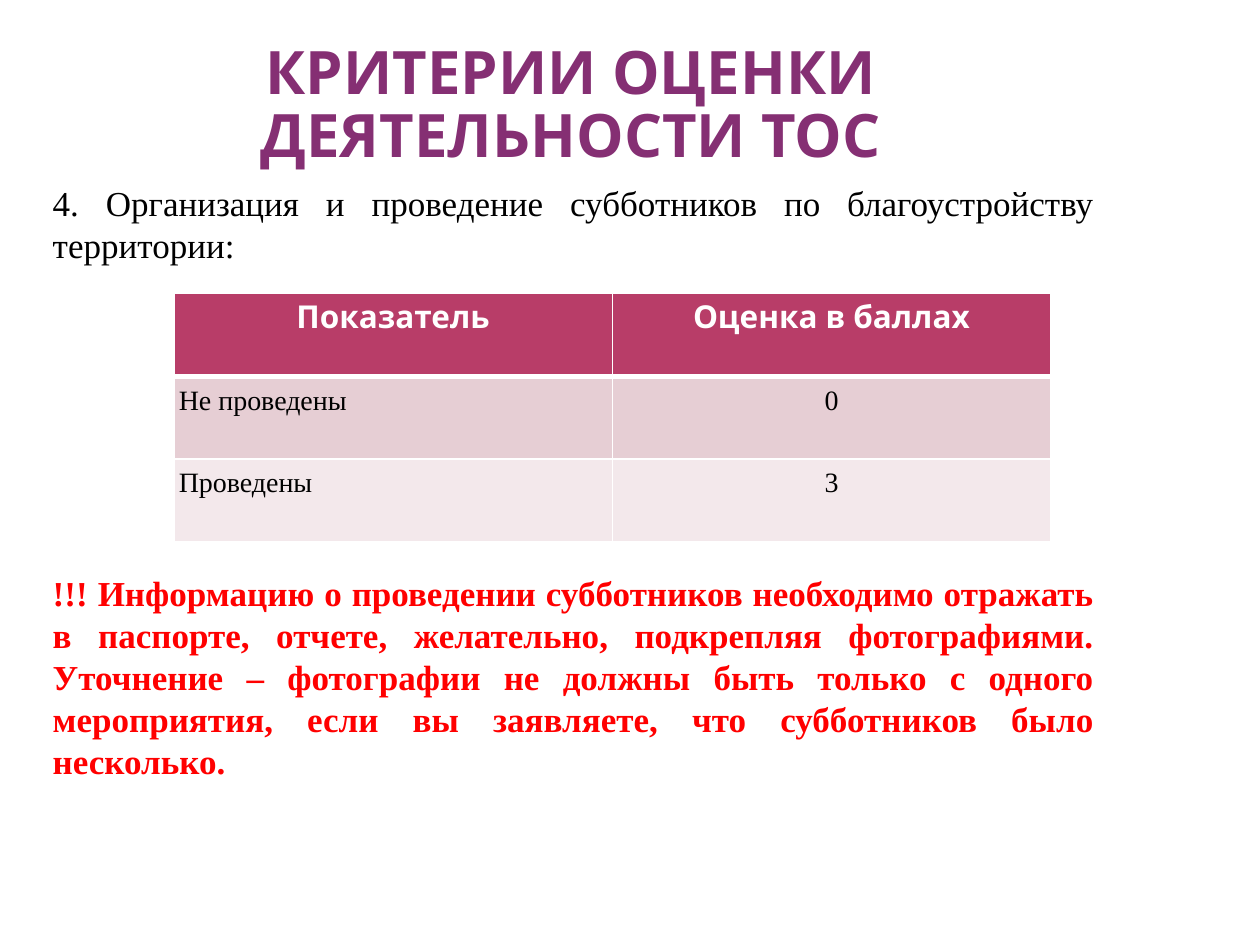
from dataclasses import dataclass

from pptx import Presentation
from pptx.dml.color import RGBColor
from pptx.enum.text import MSO_ANCHOR, MSO_AUTO_SIZE, PP_ALIGN
from pptx.oxml import parse_xml
from pptx.oxml.ns import nsdecls
from pptx.util import Inches, Pt


@dataclass(frozen=True)
class Theme:
    heading_font: str = "Karla"
    body_font: str = "Times New Roman"
    title: str = "852F73"
    text: str = "000000"
    warning: str = "FF0000"
    white: str = "FFFFFF"
    header_fill: str = "B83D68"
    row_fills: tuple = ("E6CED4", "F3E8EB")
    title_size: float = 34.2
    body_size: float = 20
    header_size: float = 18
    cell_size: float = 16


THEME = Theme()

TITLE = "КРИТЕРИИ ОЦЕНКИ ДЕЯТЕЛЬНОСТИ ТОС"
CRITERION = "4. Организация и проведение субботников по благоустройству территории:"
WARNING = (
    "!!! Информацию о проведении субботников необходимо отражать в паспорте, "
    "отчете, желательно, подкрепляя фотографиями. Уточнение – фотографии не "
    "должны быть только с одного мероприятия, если вы заявляете, что "
    "субботников было несколько."
)
SCORES = [
    ("Показатель", "Оценка в баллах"),
    ("Не проведены", "0"),
    ("Проведены", "3"),
]


def write(paragraph, text, font_name, size, color, align, bold=False):
    paragraph.text = text
    paragraph.alignment = align
    for run in paragraph.runs:
        run.font.name = font_name
        run.font.size = Pt(size)
        run.font.bold = bold
        run.font.color.rgb = RGBColor.from_string(color)


def add_title(slide):
    title = slide.shapes.title
    title.left, title.top = Inches(0.28), Inches(0.21)
    title.width, title.height = Inches(8.5), Inches(1.14)
    frame = title.text_frame
    frame.word_wrap = True
    frame.auto_size = MSO_AUTO_SIZE.NONE
    frame.vertical_anchor = MSO_ANCHOR.BOTTOM
    frame.margin_left = frame.margin_right = Inches(0.05)
    frame.margin_top = frame.margin_bottom = 0
    heading = frame.paragraphs[0]
    write(heading, TITLE, THEME.heading_font, THEME.title_size, THEME.title,
          PP_ALIGN.CENTER, bold=True)
    heading.line_spacing = 0.88


def add_body(slide):
    """Place the criterion and the warning, leaving room for the table between."""
    body = slide.shapes.add_textbox(
        Inches(0.2), Inches(1.39), Inches(8.58), Inches(5.67))
    frame = body.text_frame
    frame.word_wrap = True
    criterion, warning = frame.paragraphs[0], frame.add_paragraph()
    write(criterion, CRITERION, THEME.body_font, THEME.body_size, THEME.text,
          PP_ALIGN.JUSTIFY)
    write(warning, WARNING, THEME.body_font, THEME.body_size, THEME.warning,
          PP_ALIGN.JUSTIFY, bold=True)
    warning.space_before = Pt(175)
    for paragraph in frame.paragraphs:
        paragraph.line_spacing = Pt(24)
        paragraph._p.get_or_add_pPr().set("marL", str(Inches(0.12)))


def set_borders(cell, top, bottom):
    """Draw white borders; the widths of top and bottom are in points."""
    properties = cell._tc.get_or_add_tcPr()
    widths = {"lnL": 1, "lnR": 1, "lnT": top, "lnB": bottom}
    for position, (side, width) in enumerate(widths.items()):
        border = parse_xml(
            f'<a:{side} {nsdecls("a")} w="{Pt(width)}"><a:solidFill>'
            f'<a:srgbClr val="{THEME.white}"/></a:solidFill></a:{side}>')
        properties.insert(position, border)


def format_cell(cell, text, row, column):
    is_header = row == 0
    paragraph = cell.text_frame.paragraphs[0]
    if is_header:
        fill = THEME.header_fill
        write(paragraph, text, THEME.heading_font, THEME.header_size,
              THEME.white, PP_ALIGN.CENTER, bold=True)
    else:
        fill = THEME.row_fills[row - 1]
        align = PP_ALIGN.JUSTIFY if column == 0 else PP_ALIGN.CENTER
        write(paragraph, text, THEME.body_font, THEME.cell_size, THEME.text, align)
        cell.margin_left = cell.margin_right = Inches(0.04)
        cell.margin_top = cell.margin_bottom = Inches(0.07)
    cell.fill.solid()
    cell.fill.fore_color.rgb = RGBColor.from_string(fill)
    set_borders(cell, top=3 if row == 1 else 1, bottom=3 if is_header else 1)


def add_score_table(slide):
    table = slide.shapes.add_table(
        len(SCORES), len(SCORES[0]),
        Inches(1.38), Inches(2.33), Inches(6.96), Inches(1.97)).table
    for row, texts in enumerate(SCORES):
        for column, text in enumerate(texts):
            format_cell(table.cell(row, column), text, row, column)


def main():
    presentation = Presentation()
    presentation.slide_width = Inches(10)
    presentation.slide_height = Inches(7.5)
    title_only = presentation.slide_layouts[5]
    slide = presentation.slides.add_slide(title_only)
    add_title(slide)
    add_body(slide)
    add_score_table(slide)
    presentation.save("out.pptx")


if __name__ == "__main__":
    main()
